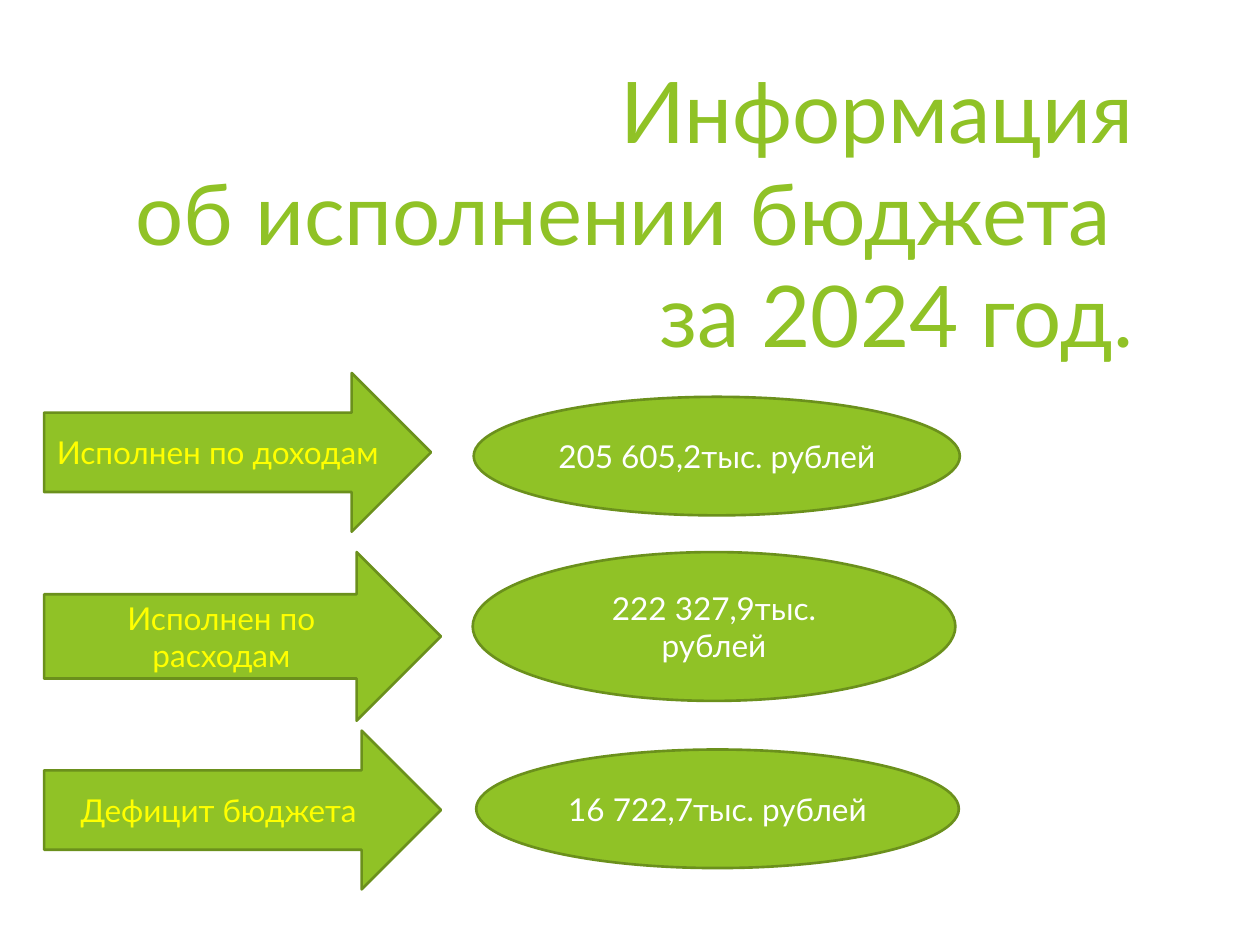
from pptx import Presentation
from pptx.dml.color import RGBColor
from pptx.enum.shapes import MSO_SHAPE
from pptx.enum.text import MSO_ANCHOR, PP_ALIGN
from pptx.util import Cm, Pt

ARROW, ELLIPSE = MSO_SHAPE.RIGHT_ARROW, MSO_SHAPE.OVAL
BOTTOM, MIDDLE = MSO_ANCHOR.BOTTOM, MSO_ANCHOR.MIDDLE
RIGHT, CENTER = PP_ALIGN.RIGHT, PP_ALIGN.CENTER

FONT = "Lato"
GREEN, DARK_GREEN, YELLOW, WHITE = "90C226", "6B901C", "FFFF00", "FFFFFF"
TITLE = "Информация\vоб исполнении бюджета \vза 2024 год."
LABEL_LEFT = 0.89

BUDGET_ROWS = [
    ("Исполнен по доходам", (LABEL_LEFT, 7.52, 7.8, 3.2),
     "205 605,2тыс. рублей ", (9.55, 8, 9.8, 2.39)),
    ("Исполнен по расходам", (LABEL_LEFT, 11.13, 8, 3.4),
     "222 327,9тыс. рублей", (9.53, 11.13, 9.73, 3)),
    ("Дефицит бюджета ", (LABEL_LEFT, 14.73, 8, 3.2),
     "16 722,7тыс. рублей", (9.6, 15.11, 9.73, 2.39)),
]


def rgb(color):
    """Return the colour for a hex string."""
    return RGBColor.from_string(color)


def write_text(frame, text, size, color, align, anchor):
    """Fill a text frame with one formatted paragraph."""
    frame.word_wrap = True
    frame.vertical_anchor = anchor
    frame.text = text
    paragraph = frame.paragraphs[0]
    paragraph.alignment = align
    for run in paragraph.runs:
        run.font.name = FONT
        run.font.size = Pt(size)
        run.font.color.rgb = rgb(color)


def add_title(slide, text, box):
    """Add the right-aligned heading."""
    title = slide.shapes.add_textbox(*map(Cm, box))
    write_text(title.text_frame, text, 48.6, GREEN, RIGHT, BOTTOM)


def add_figure(slide, kind, text, box, color):
    """Add a green outlined shape with centred text."""
    figure = slide.shapes.add_shape(kind, *map(Cm, box))
    figure.shadow.inherit = False
    figure.fill.solid()
    figure.fill.fore_color.rgb = rgb(GREEN)
    figure.line.color.rgb = rgb(DARK_GREEN)
    figure.line.width = Pt(1.5)
    write_text(figure.text_frame, text, 18, color, CENTER, MIDDLE)


def main():
    """Build and save the budget slide."""
    deck = Presentation()
    deck.slide_width, deck.slide_height = Cm(25.4), Cm(19.05)
    slide = deck.slides.add_slide(deck.slide_layouts[6])
    add_title(slide, TITLE, (1.5, 1.04, 21.59, 6.43))
    for label, label_box, amount, amount_box in BUDGET_ROWS:
        add_figure(slide, ARROW, label, label_box, YELLOW)
        add_figure(slide, ELLIPSE, amount, amount_box, WHITE)
    deck.save("out.pptx")


if __name__ == "__main__":
    main()
